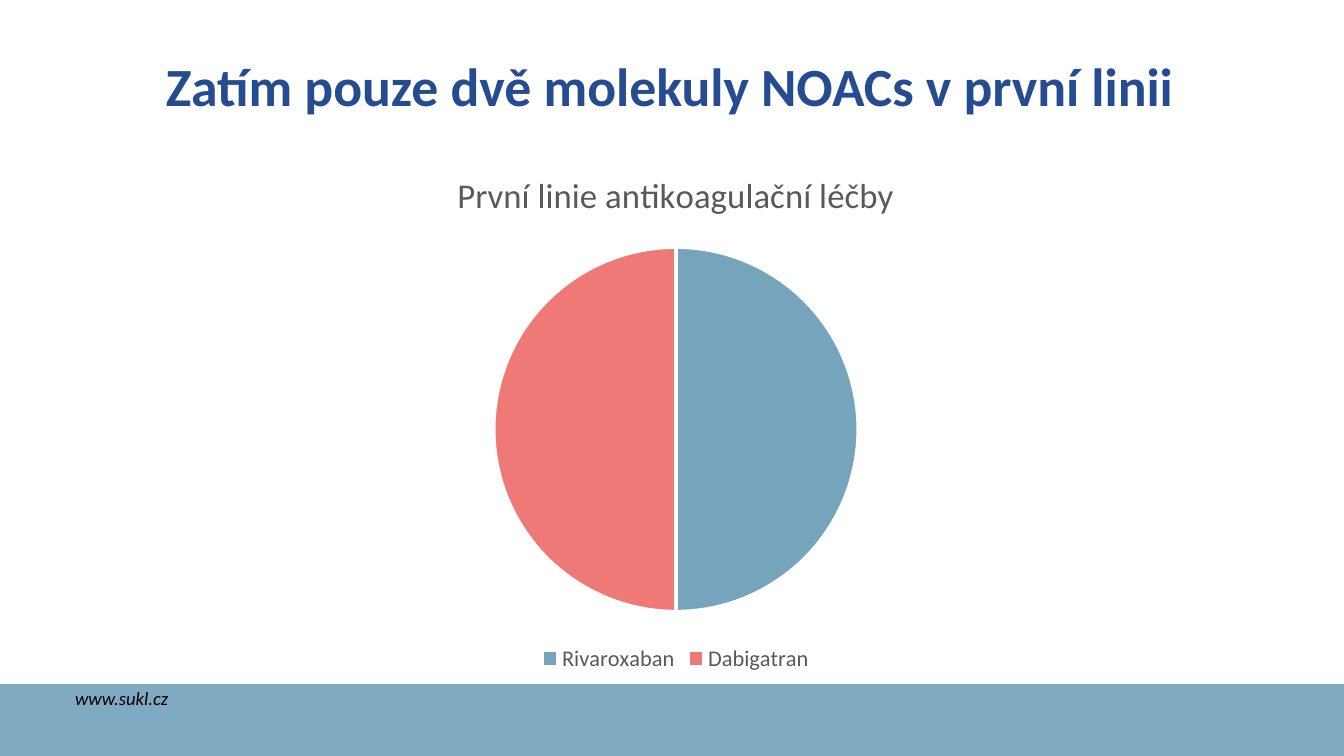
from typing import NamedTuple

from lxml.etree import SubElement
from pptx import Presentation
from pptx.chart.data import CategoryChartData
from pptx.dml.color import RGBColor
from pptx.enum.chart import XL_CHART_TYPE, XL_LEGEND_POSITION
from pptx.enum.shapes import MSO_SHAPE
from pptx.enum.text import MSO_ANCHOR, PP_ALIGN
from pptx.oxml.ns import qn
from pptx.util import Pt

COLORS = {
    "blue": "76A4BD",
    "coral": "EE7976",
    "navy": "254B90",
    "gray": "595959",
    "black": "000000",
    "white": "FFFFFF",
}
FONT = "Calibri"


class Box(NamedTuple):
    left: float
    top: float
    width: float
    height: float

    def points(self) -> list:
        return [Pt(v) for v in self]


class Slice(NamedTuple):
    name: str
    value: int
    color: str


BAND = Box(0, 366.5, 720, 38.5)
TITLE = Box(36, 29.5, 652.3, 36)
CHART = Box(36, 78.5, 652.3, 284.4)
FOOTER = Box(36, 367.2, 360, 29.5)
CHART_TITLE = "První linie antikoagulační léčby"
SLICES = [Slice("Rivaroxaban", 50, "blue"), Slice("Dabigatran", 50, "coral")]


def rgb(name: str) -> RGBColor:
    return RGBColor.from_string(COLORS[name])


def style_font(font, size: float, color: str, bold=False, italic=False) -> None:
    font.name, font.size = FONT, Pt(size)
    font.bold, font.italic = bold, italic
    font.color.rgb = rgb(color)


def add_text(s, box: Box, text: str, *, align=PP_ALIGN.LEFT,
             anchor=MSO_ANCHOR.TOP, **font_format) -> None:
    tf = s.shapes.add_textbox(*box.points()).text_frame
    tf.word_wrap = True
    tf.vertical_anchor = anchor
    tf.margin_left = tf.margin_right = Pt(4.3)
    tf.margin_top = tf.margin_bottom = Pt(2.2)
    p = tf.paragraphs[0]
    p.alignment, p.line_spacing = align, 0.9
    r = p.add_run()
    r.text = text
    style_font(r.font, **font_format)


def add_band(s, box: Box, color: str, opacity: int) -> None:
    sp = s.shapes.add_shape(MSO_SHAPE.RECTANGLE, *box.points())
    sp.shadow.inherit = False
    sp.fill.solid()
    sp.fill.fore_color.rgb = rgb(color)
    sp.line.fill.background()
    clr = sp.fill._xPr.find(qn("a:solidFill"))[0]
    SubElement(clr, qn("a:alpha"), val=str(opacity * 1000))


def add_pie(s, box: Box, title: str, slices: list[Slice]) -> None:
    data = CategoryChartData()
    data.categories = [item.name for item in slices]
    data.add_series(title, [item.value for item in slices])
    chart = s.shapes.add_chart(XL_CHART_TYPE.PIE, *box.points(), data).chart
    style_font(chart.font, 10, "black")

    chart.has_title = True
    p = chart.chart_title.text_frame.paragraphs[0]
    r = p.add_run()
    r.text = title
    style_font(r.font, 18.6, "gray")

    chart.has_legend = True
    chart.legend.position = XL_LEGEND_POSITION.BOTTOM
    chart.legend.include_in_layout = False
    style_font(chart.legend.font, 12, "gray")

    plot = chart.plots[0]
    plot.vary_by_categories = True
    for i, item in enumerate(slices):
        fmt = plot.series[0].points[i].format
        fmt.fill.solid()
        fmt.fill.fore_color.rgb = rgb(item.color)
        fmt.line.color.rgb = rgb("white")
        fmt.line.width = Pt(2)


def main() -> None:
    prs = Presentation()
    prs.slide_width, prs.slide_height = Pt(720), Pt(405)
    s = prs.slides.add_slide(prs.slide_layouts[6])

    # Footer band: two translucent layers
    for _ in range(2):
        add_band(s, BAND, "blue", 73)

    # Title; the trailing space counts in the centring
    add_text(s, TITLE, "Zatím pouze dvě molekuly NOACs v první linii ",
             align=PP_ALIGN.CENTER, anchor=MSO_ANCHOR.MIDDLE,
             size=28.8, color="navy", bold=True)

    # Pie chart
    add_pie(s, CHART, CHART_TITLE, SLICES)

    # Footer address
    add_text(s, FOOTER, "www.sukl.cz", size=10, color="black", italic=True)

    prs.save("out.pptx")


if __name__ == "__main__":
    main()
